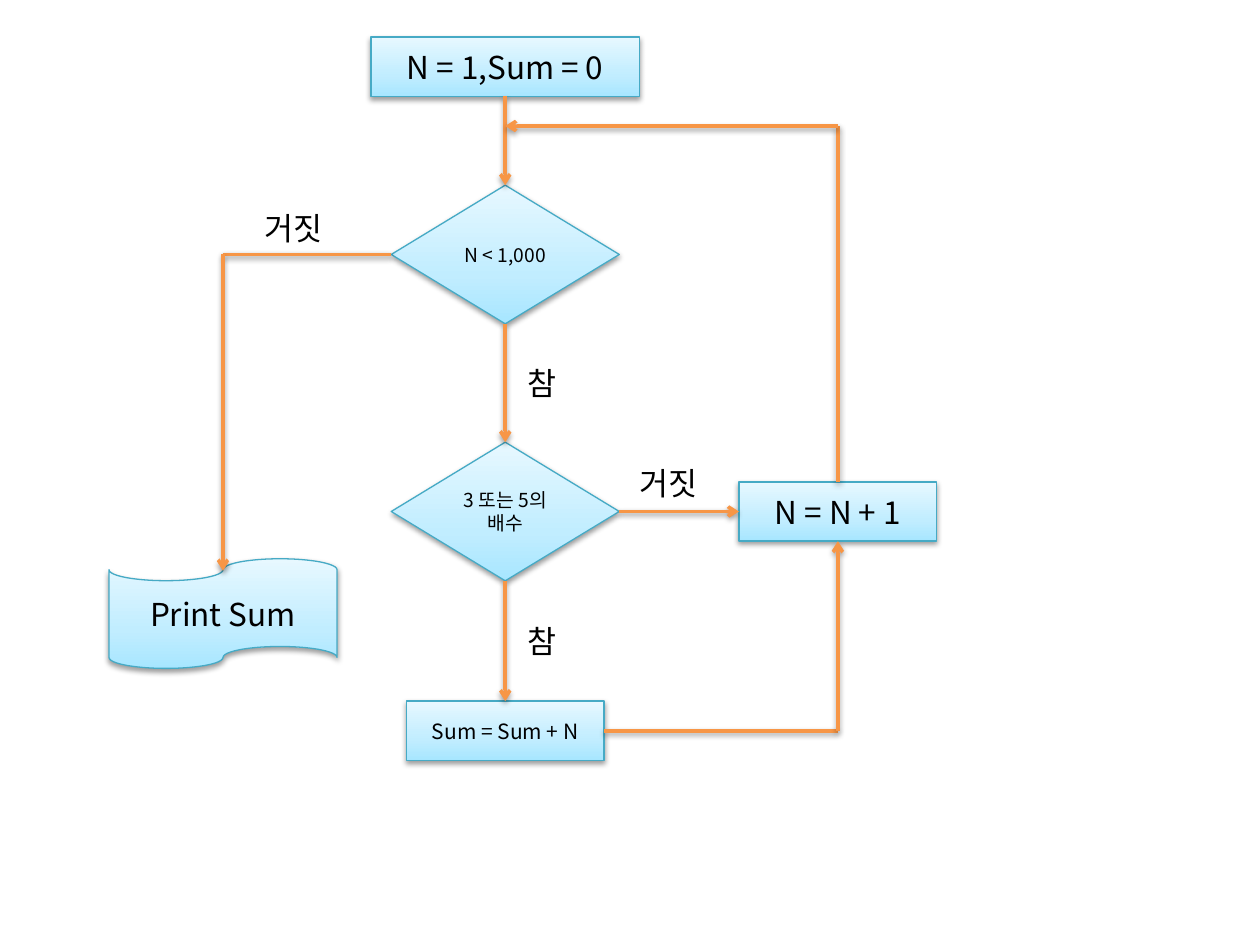
from copy import deepcopy

from lxml.etree import SubElement
from pptx import Presentation
from pptx.dml.color import RGBColor
from pptx.enum.shapes import MSO_CONNECTOR, MSO_SHAPE
from pptx.enum.text import MSO_ANCHOR, PP_ALIGN
from pptx.oxml.ns import qn
from pptx.util import Inches, Pt

FONT = "Noto Sans CJK KR"
BLACK = RGBColor(0x00, 0x00, 0x00)
TEAL = RGBColor(0x46, 0xAA, 0xC5)
ORANGE = RGBColor(0xF7, 0x96, 0x46)
BLUES = [
    (0, RGBColor(0xA7, 0xE6, 0xFF)),
    (0.35, RGBColor(0xC1, 0xED, 0xFF)),
    (1, RGBColor(0xE7, 0xF8, 0xFF)),
]

# Column centres and row centres of the flow, in inches
LEFT, MID, RIGHT = 1.77, 4.01, 6.65
START, TEST, CHECK, ADD, PRINT = 0.53, 2.02, 4.06, 5.8, 4.87
JOIN = 1.0  # height where the loop comes back

# Node sizes
WIDE, BOX = (2.13, 0.47), (1.57, 0.47)
GEM, TAPE = (1.81, 1.1), (1.81, 0.87)


def add_shadow(shape):
    effects = SubElement(shape._element.spPr, qn("a:effectLst"))
    shadow = SubElement(effects, qn("a:outerShdw"), blurRad="40000",
                        dist="20000", dir="5400000", rotWithShape="0")
    color = SubElement(shadow, qn("a:srgbClr"), val=str(BLACK))
    SubElement(color, qn("a:alpha"), val="38000")


def set_text(shape, text, size):
    frame = shape.text_frame
    frame.text = text
    frame.word_wrap = True
    for run in frame.paragraphs[0].runs:
        run.font.size = Pt(size)
        run.font.color.rgb = BLACK
        run.font.name = FONT
        SubElement(run.font._element, qn("a:ea"), typeface=FONT)
    return frame


def fill_blue(shape):
    fill = shape.fill
    fill.gradient()
    fill.gradient_angle = 90
    # The default gradient has two stops, so add a middle one
    first = fill._xPr.find(".//" + qn("a:gs"))
    first.addnext(deepcopy(first))
    for stop, (place, color) in zip(fill.gradient_stops, BLUES):
        stop.position = place
        stop.color.rgb = color


def add_node(slide, kind, x, y, size, text, points):
    """Add a step of the flow centred on (x, y)."""
    w, h = size
    node = slide.shapes.add_shape(kind, Inches(x - w / 2), Inches(y - h / 2),
                                  Inches(w), Inches(h))
    fill_blue(node)
    node.line.color.rgb = TEAL
    node.line.width = Pt(0.75)
    add_shadow(node)
    frame = set_text(node, text, points)
    frame.vertical_anchor = MSO_ANCHOR.MIDDLE
    frame.paragraphs[0].alignment = PP_ALIGN.CENTER


def add_line(slide, start, end, arrow=True):
    link = slide.shapes.add_connector(MSO_CONNECTOR.STRAIGHT,
                                      *map(Inches, start + end))
    link.line.color.rgb = ORANGE
    link.line.width = Pt(2)
    if arrow:
        SubElement(link.line._get_or_add_ln(), qn("a:tailEnd"), type="arrow")
    add_shadow(link)


def add_label(slide, x, y, text):
    box = slide.shapes.add_textbox(Inches(x), Inches(y),
                                   Inches(0.89), Inches(0.4))
    set_text(box, text, 18)


def main():
    deck = Presentation()
    deck.slide_width, deck.slide_height = Inches(10), Inches(7.5)
    slide = deck.slides.add_slide(deck.slide_layouts[6])

    # Steps
    rect, gem = MSO_SHAPE.RECTANGLE, MSO_SHAPE.FLOWCHART_DECISION
    tape = MSO_SHAPE.FLOWCHART_PUNCHED_TAPE
    for node in [
        (rect, MID, START, WIDE, "N = 1,Sum = 0", 18),
        (gem, MID, TEST, GEM, "N < 1,000", 11),
        (gem, MID, CHECK, GEM, "3 또는 5의 배수", 11),
        (rect, MID, ADD, BOX, "Sum = Sum + N", 12),
        (rect, RIGHT, CHECK, BOX, "N = N + 1", 18),
        (tape, LEFT, PRINT, TAPE, "Print Sum", 18),
    ]:
        add_node(slide, *node)

    # Edges of the nodes, measured from their centres
    box_x, box_y = BOX[0] / 2, BOX[1] / 2
    gem_x, gem_y = GEM[0] / 2, GEM[1] / 2

    # Main path downwards
    add_line(slide, (MID, START + box_y), (MID, TEST - gem_y))
    add_line(slide, (MID, TEST + gem_y), (MID, CHECK - gem_y))
    add_line(slide, (MID, CHECK + gem_y), (MID, ADD - box_y))

    # Both ways to the counter, and the loop back
    add_line(slide, (MID + gem_x, CHECK), (RIGHT - box_x, CHECK))
    add_line(slide, (MID + box_x, ADD), (RIGHT, ADD), arrow=False)
    add_line(slide, (RIGHT, ADD), (RIGHT, CHECK + box_y))
    add_line(slide, (RIGHT, CHECK - box_y), (RIGHT, JOIN), arrow=False)
    add_line(slide, (RIGHT, JOIN), (MID, JOIN))

    # Way out to the print step
    add_line(slide, (LEFT, TEST), (MID - gem_x, TEST), arrow=False)
    add_line(slide, (LEFT, TEST), (LEFT, 4.53))

    # Branch labels
    for label in [(2, 1.61, "거짓"), (4.98, 3.63, "거짓"),
                  (4.09, 2.84, "참"), (4.09, 4.89, "참")]:
        add_label(slide, *label)

    deck.save("out.pptx")


if __name__ == "__main__":
    main()
